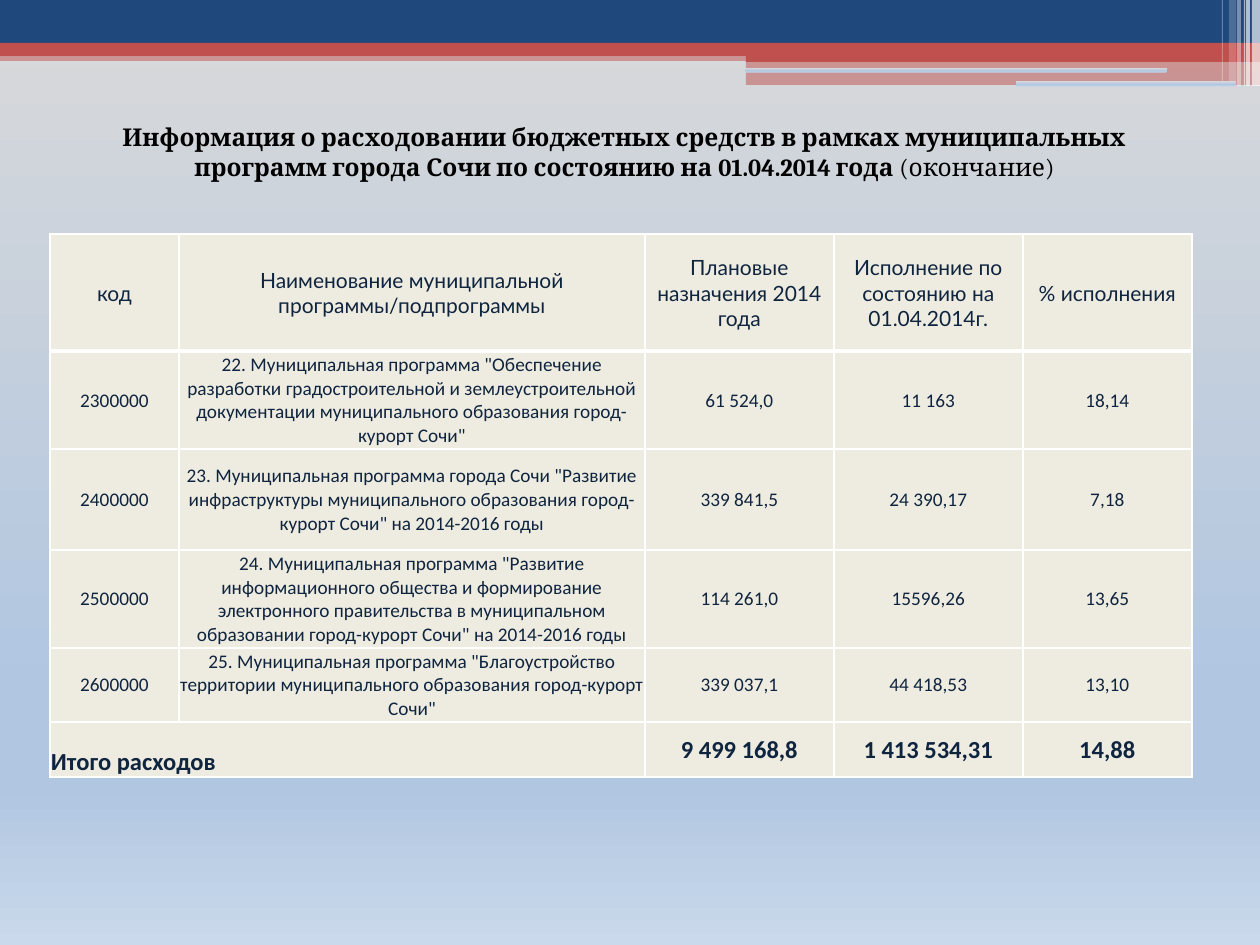
"""Build the slide on spending under the municipal programmes of Sochi."""
from lxml import etree
from pptx import Presentation
from pptx import util as u
from pptx.dml.color import RGBColor
from pptx.enum import shapes, text
from pptx.oxml.ns import qn

PX = 914400 // 126
HUE = {"navy": "1F497D", "red": "C0504D", "white": "FFFFFF",
       "cream": "EEECE1", "ink": "0F243E", "black": "000000"}
SKY = [(0, "D9D9D9"), (74, "B0C6E1"), (83, "B0C6E1"), (100, "CAD9EB")]


def write(frame, line, size=11, font="Calibri", hue="ink", bold=False, align="CENTER"):
    para = frame.paragraphs[0]
    para.alignment = text.PP_ALIGN[align]
    run = para.add_run()
    run.text = line
    run.font.size = u.Pt(size)
    run.font.name = font
    run.font.bold = bold
    run.font.color.rgb = RGBColor.from_string(HUE[hue])


def shade(fill, root):
    fill.gradient()
    fill.gradient_angle = 270
    stops = next(root.iter(qn("a:gsLst")))
    for old in list(stops):
        stops.remove(old)
    for pos, tone in SKY:
        stop = etree.SubElement(stops, qn("a:gs"), pos=str(pos * 1000))
        etree.SubElement(stop, qn("a:srgbClr"), val=tone)


prs = Presentation()
prs.slide_width, prs.slide_height = u.Inches(10), u.Inches(7.5)
slide = prs.slides.add_slide(prs.slide_layouts[5])
shade(slide.background.fill, slide.element)

bars = [
    (0, 50, 1260, 11, "red", 50),
    (0, 0, 1260, 43, "navy", 100),
    (0, 43, 1260, 13, "red", 100),
    (746, 49, 514, 13, "red", 100),
    (746, 60, 514, 25, "red", 50),
    (745, 68, 422, 4, "sky", 100),
    (1016, 81, 220, 5, "sky", 100),
    (1252, 0, 8, 86, "white", 65),
    (1246, 0, 4, 86, "white", 65),
    (1244, 0, 1, 86, "white", 60),
    (1237, 0, 4, 86, "white", 40),
    (1229, 0, 7, 81, "white", 20),
    (1222, 0, 1, 81, "white", 30),
]
for x, y, w, h, hue, alpha in bars:
    kind = "ROUNDED_RECTANGLE" if hue == "sky" else "RECTANGLE"
    bar = slide.shapes.add_shape(shapes.MSO_SHAPE[kind], x * PX, y * PX, w * PX, h * PX)
    bar.shadow.inherit = False
    bar.line.fill.background()
    if hue == "sky":
        shade(bar.fill, bar.element)
        continue
    bar.fill.solid()
    bar.fill.fore_color.rgb = RGBColor.from_string(HUE[hue])
    if alpha < 100:
        tone = next(bar.element.iter(qn("a:srgbClr")))
        etree.SubElement(tone, qn("a:alpha"), val=str(alpha * 1000))

cols = [129, 466, 189, 189, 169]
rows = [117, 98, 101, 98, 74, 55]
data = [
    ["код", "Наименование муниципальной программы/подпрограммы",
     "Плановые назначения 2014 года", "Исполнение по состоянию на 01.04.2014г.",
     "% исполнения"],
    ["2300000", '22. Муниципальная программа "Обеспечение разработки градостроительной и '
     'землеустроительной документации муниципального образования город-курорт Сочи"',
     "61 524,0", "11 163", "18,14"],
    ["2400000", '23. Муниципальная программа города Сочи "Развитие инфраструктуры '
     'муниципального образования город-курорт Сочи" на 2014-2016 годы',
     "339 841,5", "24 390,17", "7,18"],
    ["2500000", '24. Муниципальная программа "Развитие информационного общества и '
     'формирование электронного правительства в муниципальном образовании '
     'город-курорт Сочи" на 2014-2016 годы',
     "114 261,0", "15596,26", "13,65"],
    ["2600000", '25. Муниципальная программа "Благоустройство территории '
     'муниципального образования город-курорт Сочи"',
     "339 037,1", "44 418,53", "13,10"],
    ["Итого расходов", "", "9 499 168,8", "1 413 534,31", "14,88"],
]
table = slide.shapes.add_table(len(rows), len(cols), 50 * PX, 234 * PX,
                               sum(cols) * PX, sum(rows) * PX).table
for col, w in zip(table.columns, cols):
    col.width = w * PX
for row, h in zip(table.rows, rows):
    row.height = h * PX
last = len(rows) - 1
table.cell(last, 0).merge(table.cell(last, 1))

for r, row in enumerate(data):
    style = {0: {"size": 12, "font": "Lato"}, last: {"size": 14, "bold": True}}.get(r, {})
    for c, line in enumerate(row):
        cell = table.cell(r, c)
        total = r == last and c == 0
        cell.margin_left = cell.margin_right = cell.margin_top = PX
        cell.margin_bottom = 0
        cell.vertical_anchor = text.MSO_ANCHOR.BOTTOM if total else text.MSO_ANCHOR.MIDDLE
        props = cell._tc.get_or_add_tcPr()
        for side in "LRTB":
            thick = (r, side) in ((0, "B"), (1, "T"))
            edge = etree.SubElement(props, qn("a:ln" + side), w=str(u.Pt(3 if thick else 1)))
            paint = etree.SubElement(edge, qn("a:solidFill"))
            etree.SubElement(paint, qn("a:srgbClr"), val=HUE["white"])
        cell.fill.solid()
        cell.fill.fore_color.rgb = RGBColor.from_string(HUE["cream"])
        if line:
            write(cell.text_frame, line, align="LEFT" if total else "CENTER", **style)

title = slide.shapes.title
title.left, title.top, title.width, title.height = 64 * PX, 116 * PX, 1121 * PX, 72 * PX
frame = title.text_frame
frame.word_wrap = True
frame.auto_size = text.MSO_AUTO_SIZE.SHAPE_TO_FIT_TEXT
frame.vertical_anchor = text.MSO_ANCHOR.TOP
head = {"size": 14, "font": "Cambria", "hue": "black"}
write(frame, "Информация о расходовании бюджетных средств в рамках муниципальных программ "
      "города Сочи по состоянию на 01.04.2014 года ", bold=True, **head)
write(frame, "(окончание)", **head)

prs.save("out.pptx")
